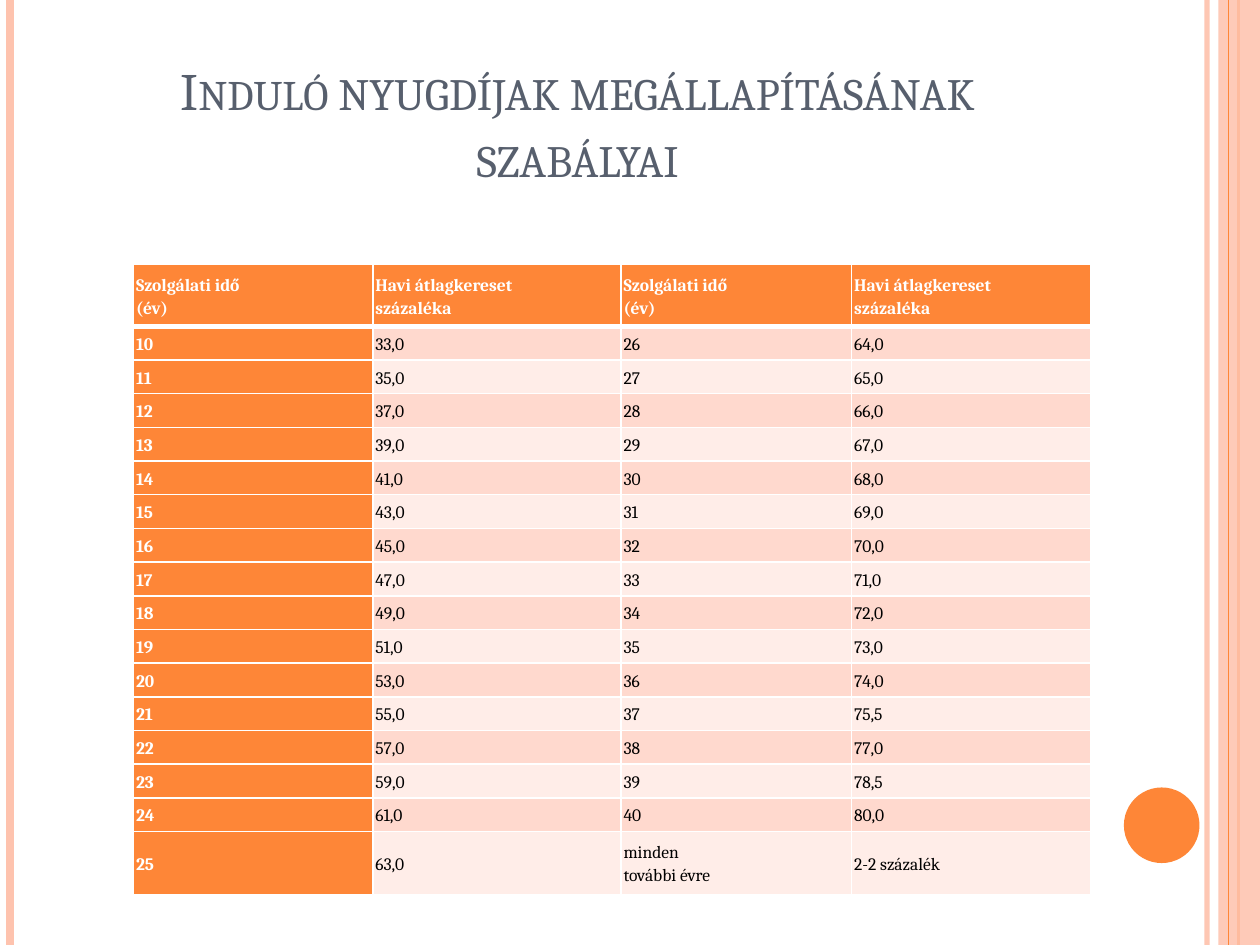
from dataclasses import dataclass

from lxml import etree
from pptx import Presentation
from pptx.dml.color import RGBColor
from pptx.enum.shapes import MSO_CONNECTOR, MSO_SHAPE
from pptx.enum.text import MSO_ANCHOR, PP_ALIGN
from pptx.oxml.ns import qn
from pptx.slide import Slide
from pptx.table import _Cell
from pptx.util import Inches, Pt

STRAIGHT = MSO_CONNECTOR.STRAIGHT
RECT, OVAL = MSO_SHAPE.RECTANGLE, MSO_SHAPE.OVAL
MIDDLE, BOTTOM = MSO_ANCHOR.MIDDLE, MSO_ANCHOR.BOTTOM
CENTER = PP_ALIGN.CENTER


@dataclass(frozen=True)
class Theme:
    font: str = "Cambria"
    orange: str = "FE8637"
    peach: str = "FEC3AE"
    dark: str = "FFD9CE"
    light: str = "FFEDE8"
    slate: str = "575F6D"
    white: str = "FFFFFF"
    black: str = "000000"
    lead: int = 30
    title: int = 32
    body: int = 10


THEME = Theme()


@dataclass(frozen=True)
class Rule:
    x: float
    color: str
    width: float
    alpha: int = 100


@dataclass(frozen=True)
class Block:
    kind: int
    x: float
    y: float
    width: float
    height: float
    color: str
    alpha: int = 100


RULES_BACK = [
    Rule(9.58, THEME.peach, 3, 93),
    Rule(0.08, THEME.peach, 4.5),
    Rule(9.83, THEME.orange, 1.5),
]
BAND = Block(RECT, 9.67, 0, 0.33, 7.5, THEME.peach, 87)
RULE_FRONT = Rule(9.75, THEME.orange, 0.75)
DISC = Block(OVAL, 8.92, 6.25, 0.6, 0.6, THEME.orange)

HEAD = ["Szolgálati idő\n(év)", "Havi átlagkereset\nszázaléka"] * 2
RATES = ["64,0", "65,0", "66,0", "67,0", "68,0", "69,0", "70,0", "71,0",
         "72,0", "73,0", "74,0", "75,5", "77,0", "78,5", "80,0"]
ROWS = [HEAD]
ROWS += [[str(10 + i), f"{33 + 2 * i},0", str(26 + i), rate]
         for i, rate in enumerate(RATES)]
ROWS.append(["25", "63,0", "minden\ntovábbi évre", "2-2 százalék"])

WIDTHS = [1.9, 1.97, 1.83, 1.9]
TALL, FIRST, LAST = 5, 0.49, 0.5
STEP = (TALL - FIRST - LAST) / len(RATES)
HEIGHTS = [FIRST] + [STEP] * len(RATES) + [LAST]


def rgb(color: str) -> RGBColor:
    return RGBColor.from_string(color)


def fade(props: etree._Element, alpha: int) -> None:
    if alpha < 100:
        tint = next(props.iter(qn("a:srgbClr")))
        etree.SubElement(tint, qn("a:alpha"), val=str(alpha * 1000))


def draw_rule(slide: Slide, rule: Rule) -> None:
    x = Inches(rule.x)
    line = slide.shapes.add_connector(STRAIGHT, x, 0, x, Inches(7.5))
    line.line.color.rgb = rgb(rule.color)
    line.line.width = Pt(rule.width)
    props = line._element.spPr
    fade(props, rule.alpha)
    etree.SubElement(props, qn("a:effectLst"))


def draw_block(slide: Slide, block: Block) -> None:
    shape = slide.shapes.add_shape(
        block.kind, Inches(block.x), Inches(block.y),
        Inches(block.width), Inches(block.height))
    shape.shadow.inherit = False
    shape.fill.solid()
    shape.fill.fore_color.rgb = rgb(block.color)
    shape.line.fill.background()
    fade(shape._element.spPr, block.alpha)


def draw_title(slide: Slide) -> None:
    box = slide.shapes.add_textbox(
        Inches(0.5), Inches(0.3), Inches(8.17), Inches(1.25))
    frame = box.text_frame
    frame.word_wrap = True
    frame.vertical_anchor = BOTTOM
    para = frame.paragraphs[0]
    para.alignment = CENTER
    para.font.name = THEME.font
    para.font.color.rgb = rgb(THEME.slate)
    for text, size in (("Induló", THEME.lead),
                       (" nyugdíjak megállapításának szabályai", THEME.title)):
        run = para.add_run()
        run.text = text
        run.font.size = Pt(size)
        run._r.get_or_add_rPr().set("cap", "small")


def add_edge(cell: _Cell, side: str, width: float) -> None:
    edge = etree.SubElement(cell._tc.get_or_add_tcPr(), qn(f"a:ln{side}"),
                            w=str(Pt(width)))
    fill = etree.SubElement(edge, qn("a:solidFill"))
    etree.SubElement(fill, qn("a:srgbClr"), val=THEME.white)


def fill_cell(cell: _Cell, text: str, row: int, col: int) -> None:
    strong = row == 0 or col == 0
    for side in "LRTB":
        thick = (row, side) in ((0, "B"), (1, "T"))
        add_edge(cell, side, 3 if thick else 1)
    cell.fill.solid()
    band = THEME.dark if row % 2 else THEME.light
    cell.fill.fore_color.rgb = rgb(THEME.orange if strong else band)
    cell.vertical_anchor = MIDDLE
    cell.margin_left = cell.margin_right = Inches(0.02)
    cell.margin_top = cell.margin_bottom = Inches(0.02)
    para = cell.text_frame.paragraphs[0]
    para.text = text
    para.line_spacing = 1.15
    para.font.name = THEME.font
    para.font.size = Pt(THEME.body)
    para.font.bold = strong
    para.font.color.rgb = rgb(THEME.white if strong else THEME.black)


def draw_table(slide: Slide) -> None:
    table = slide.shapes.add_table(
        len(ROWS), len(WIDTHS), Inches(1.06), Inches(2.1),
        Inches(sum(WIDTHS)), Inches(TALL)).table
    for col, width in zip(table.columns, WIDTHS):
        col.width = Inches(width)
    for row, height in zip(table.rows, HEIGHTS):
        row.height = Inches(height)
    for i, texts in enumerate(ROWS):
        for j, text in enumerate(texts):
            fill_cell(table.cell(i, j), text, i, j)


def main() -> None:
    deck = Presentation()
    deck.slide_width, deck.slide_height = Inches(10), Inches(7.5)
    slide = deck.slides.add_slide(deck.slide_layouts[6])
    for rule in RULES_BACK:
        draw_rule(slide, rule)
    draw_block(slide, BAND)
    draw_rule(slide, RULE_FRONT)
    draw_block(slide, DISC)
    draw_title(slide)
    draw_table(slide)
    deck.save("out.pptx")


if __name__ == "__main__":
    main()
